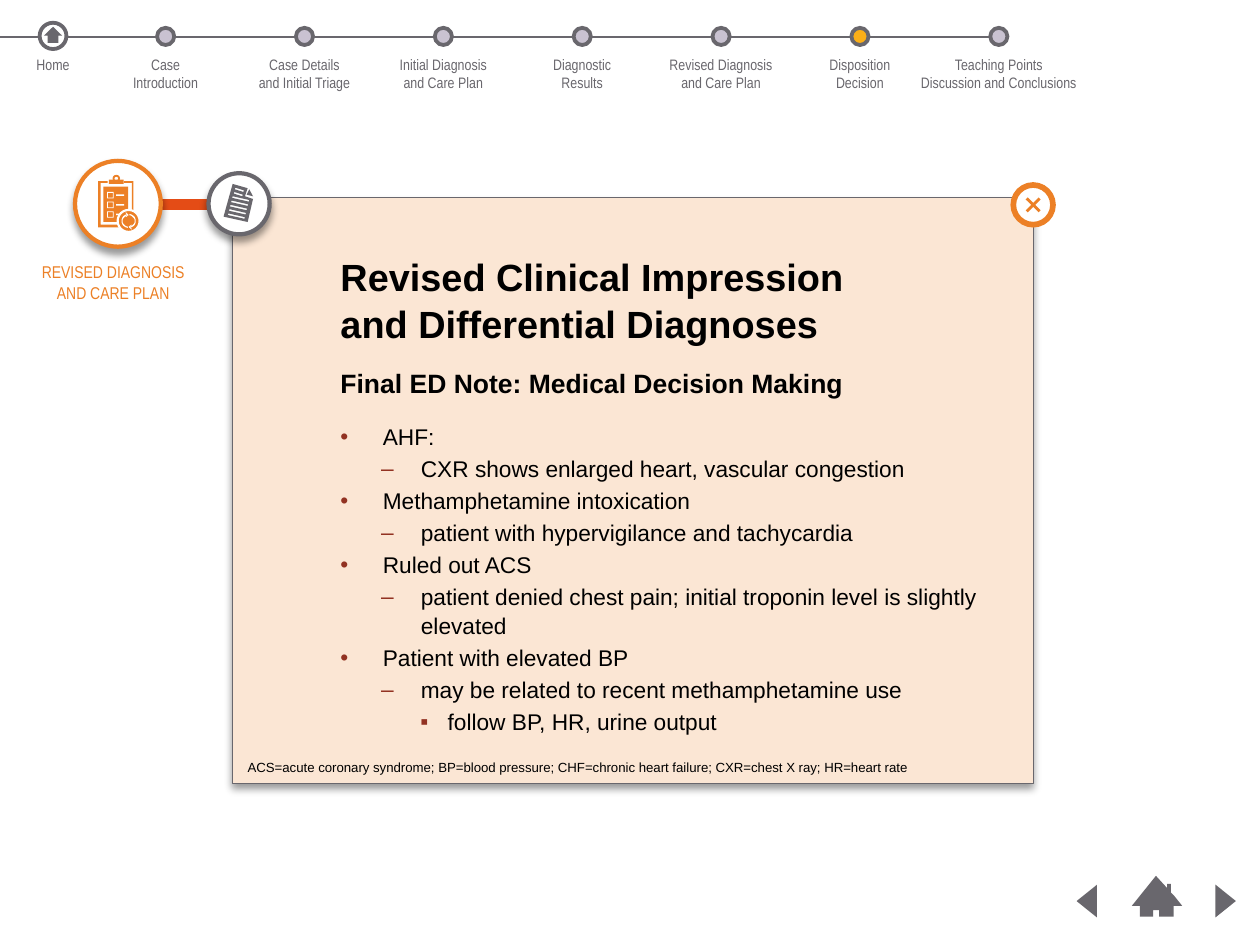
"""Build the revised clinical impression slide with its navigation bar."""
from math import cos, pi, sin

from lxml import etree
from pptx import Presentation
from pptx.dml.color import RGBColor
from pptx.enum import shapes, text
from pptx.oxml import ns
from pptx.util import Cm, Pt

GREY = RGBColor(0x69, 0x67, 0x6D)
ORANGE = RGBColor(0xEC, 0x80, 0x26)
BAR_RED = RGBColor(0xE4, 0x4C, 0x16)
CREAM = RGBColor(0xFB, 0xE6, 0xD4)
LILAC = RGBColor(0xC9, 0xC2, 0xD1)
AMBER = RGBColor(0xFC, 0xAF, 0x17)
BRICK = RGBColor(0x92, 0x32, 0x22)
BLACK = RGBColor(0, 0, 0)
WHITE = RGBColor(0xFF, 0xFF, 0xFF)
KIND = shapes.MSO_SHAPE

STOPS = [
    ["Case", "Introduction"],
    ["Case Details", "and Initial Triage"],
    ["Initial Diagnosis", "and Care Plan"],
    ["Diagnostic", "Results"],
    ["Revised Diagnosis", "and Care Plan"],
    ["Disposition", "Decision"],
    ["Teaching Points", "Discussion and Conclusions"],
]
CURRENT_STOP = 5
HEADING = ["Revised Clinical Impression", "and Differential Diagnoses"]
NOTE_HEADING = "Final ED Note: Medical Decision Making"
FINDINGS = [
    (0, "AHF:"),
    (1, "CXR shows enlarged heart, vascular congestion"),
    (0, "Methamphetamine intoxication"),
    (1, "patient with hypervigilance and tachycardia"),
    (0, "Ruled out ACS"),
    (1, "patient denied chest pain; initial troponin level is slightly elevated"),
    (0, "Patient with elevated BP"),
    (1, "may be related to recent methamphetamine use"),
    (2, "follow BP, HR, urine output"),
]
BULLETS = [("•", 0.79, 0.79), ("–", 1.5, 0.74), ("▪", 2.0, 0.51)]
SECTION = "REVISED DIAGNOSIS AND CARE PLAN"
ABBREVIATIONS = ("ACS=acute coronary syndrome; BP=blood pressure; CHF=chronic heart "
                 "failure; CXR=chest X ray; HR=heart rate")

# Outlines below are in hundredths of a centimetre.
BOARD_FRAME = [(231, 338), (231, 341), (246, 341), (246, 419), (188, 419), (188, 341),
               (201, 341), (201, 338), (183, 338), (183, 424), (249, 424), (249, 338)]
CHEVRON = [(234, 397), (235, 396), (240, 401), (235, 405), (234, 404), (238, 401)]
BADGE_CENTRE = (240, 412)
PAGE = [(457, 366), (462, 351), (434, 343), (417, 404), (462, 414), (472, 371)]
PAGE_FOLD = [(465, 353), (460, 363), (472, 366)]
SHORT_LINE = [(439, 350), (455, 355), (454, 358), (438, 353)]
LONG_LINE = [(434, 366), (465, 373), (464, 376), (433, 369)]
HOUSE = [(2189, 1669), (2184, 1664), (2184, 1648), (2177, 1648), (2177, 1656),
         (2156, 1633), (2111, 1689), (2126, 1689), (2126, 1709), (2151, 1709),
         (2151, 1697), (2162, 1697), (2162, 1709), (2189, 1709), (2189, 1689),
         (2205, 1689)]


def paint(part, fill, line=None, weight=0, shadow=False):
    part.shadow.inherit = False
    part.fill.solid()
    part.fill.fore_color.rgb = fill
    if line is None:
        part.line.fill.background()
    else:
        part.line.color.rgb = line
        part.line.width = Pt(weight)
    if shadow:
        effects = part._element.spPr.find(ns.qn("a:effectLst"))
        outer = etree.SubElement(effects, ns.qn("a:outerShdw"), blurRad=str(Pt(4)),
                                 dist=str(Pt(3)), dir="5400000", rotWithShape="0")
        shade = etree.SubElement(outer, ns.qn("a:srgbClr"), val="000000")
        etree.SubElement(shade, ns.qn("a:alpha"), val="40000")
    return part


def centred(slide, kind, x, y, width, height, *look):
    part = slide.shapes.add_shape(kind, Cm(x - width / 2), Cm(y - height / 2),
                                  Cm(width), Cm(height))
    return paint(part, *look)


def outline(slide, contours, fill):
    pen = slide.shapes.build_freeform(*contours[0][0], scale=Cm(0.01))
    pen.add_line_segments(contours[0][1:])
    for contour in contours[1:]:
        pen.move_to(*contour[0])
        pen.add_line_segments(contour[1:])
    return paint(pen.convert_to_shape(), fill)


def rule(slide, x1, y1, x2, y2, color, weight):
    line = slide.shapes.add_connector(shapes.MSO_CONNECTOR.STRAIGHT,
                                      Cm(x1), Cm(y1), Cm(x2), Cm(y2))
    line.line.color.rgb = color
    line.line.width = Pt(weight)
    etree.SubElement(line._element.spPr, ns.qn("a:effectLst"))


def write(paragraph, lines, size, color, font="Arial", bold=False):
    for i, words in enumerate(lines):
        if i:
            paragraph.add_line_break()
        run = paragraph.add_run()
        run.text = words
        run.font.name, run.font.size, run.font.bold = font, Pt(size), bold
        run.font.color.rgb = color


def frame(part, x, y, width, height, margin_x=0, margin_y=0):
    part.left, part.top, part.width, part.height = Cm(x), Cm(y), Cm(width), Cm(height)
    box = part.text_frame
    box.word_wrap = True
    box.auto_size = text.MSO_AUTO_SIZE.NONE
    box.vertical_anchor = text.MSO_ANCHOR.TOP
    box.margin_left = box.margin_right = Cm(margin_x)
    box.margin_top = box.margin_bottom = Cm(margin_y)
    return box


def label(slide, lines, x, y, width, height, margins, size, color, font, align):
    box = frame(slide.shapes.add_textbox(0, 0, 0, 0), x, y, width, height, *margins)
    box.paragraphs[0].alignment = align
    write(box.paragraphs[0], lines, size, color, font)


def space(paragraph, after):
    paragraph.alignment = text.PP_ALIGN.LEFT
    paragraph.line_spacing = 1.04
    paragraph.space_before, paragraph.space_after = Pt(0), Pt(after)


def indent(paragraph, mark=None, left=0, hang=0):
    props = paragraph._p.get_or_add_pPr()
    props.set("marL", str(Cm(left)))
    props.set("indent", str(-Cm(hang)))
    if mark is None:
        etree.SubElement(props, ns.qn("a:buNone"))
        return
    color = etree.SubElement(props, ns.qn("a:buClr"))
    etree.SubElement(color, ns.qn("a:srgbClr"), val=str(BRICK))
    etree.SubElement(props, ns.qn("a:buFont"), typeface="Arial")
    etree.SubElement(props, ns.qn("a:buChar"), char=mark)


def draw_card(slide):
    centred(slide, KIND.RECTANGLE, 11.81, 9.14, 14.94, 10.92, CREAM, GREY, 0.25, True)
    title, body = slide.shapes.title, slide.placeholders[1]
    for part in (title, body):
        slide.shapes._spTree.append(part._element)
    heading = frame(title, 6.35, 4.7, 12.52, 1.8).paragraphs[0]
    space(heading, 0)
    write(heading, HEADING, 20, BLACK, bold=True)
    notes = frame(body, 6.35, 6.82, 12.52, 6.8)
    subheading = notes.paragraphs[0]
    space(subheading, 12)
    indent(subheading)
    write(subheading, [NOTE_HEADING], 14, BLACK, bold=True)
    for level, finding in FINDINGS:
        item = notes.add_paragraph()
        item.level = level
        space(item, 2)
        indent(item, *BULLETS[level])
        write(item, [finding], 12, BLACK)
    label(slide, [ABBREVIATIONS], 4.37, 14.02, 14.48, 0.56, (0.25, 0.13), 7, BLACK,
          "Arial", text.PP_ALIGN.LEFT)
    centred(slide, KIND.OVAL, 19.27, 3.82, 0.74, 0.74, WHITE, ORANGE, 3)
    for rise in (0.12, -0.12):
        rule(slide, 19.15, 3.82 - rise, 19.39, 3.82 + rise, ORANGE, 1.5)


def draw_section(slide):
    rule(slide, 2.9, 3.81, 3.96, 3.81, BAR_RED, 6)
    centred(slide, KIND.OVAL, 4.46, 3.8, 1.14, 1.14, WHITE, GREY, 2.25, True)
    lines = [[(x - 2 * i, y + 8 * i) for x, y in line]
             for line, count in ((SHORT_LINE, 2), (LONG_LINE, 5)) for i in range(count)]
    outline(slide, [PAGE] + lines, GREY)
    outline(slide, [PAGE_FOLD], GREY)
    centred(slide, KIND.OVAL, 2.2, 3.8, 1.6, 1.6, WHITE, ORANGE, 2.25, True)
    centred(slide, KIND.RECTANGLE, 2.16, 3.81, 0.46, 0.66, ORANGE)
    outline(slide, [BOARD_FRAME], ORANGE)
    centred(slide, KIND.RECTANGLE, 2.17, 3.39, 0.28, 0.08, ORANGE)
    centred(slide, KIND.DONUT, 2.17, 3.33, 0.14, 0.14, ORANGE)
    for i in range(3):
        y = 3.64 + 0.18 * i
        centred(slide, KIND.FRAME, 2.06, y, 0.12, 0.12, WHITE)
        centred(slide, KIND.RECTANGLE, 2.24, y, 0.15, 0.03, WHITE)
    cx, cy = BADGE_CENTRE
    centred(slide, KIND.OVAL, cx / 100, cy / 100, 0.41, 0.41, ORANGE, WHITE, 1.13)
    angles = [pi * (i / 12 - 0.5) * 0.92 for i in range(13)]
    for side in (-1, 1):
        arc = [(cx + side * r * cos(a), cy + r * sin(a))
               for r, sweep in ((13, angles), (11, angles[::-1])) for a in sweep]
        outline(slide, [arc], WHITE)
        arrow = [(cx - side * (cx - x), cy - side * (cy - y)) for x, y in CHEVRON]
        outline(slide, [arrow], WHITE)
    label(slide, [SECTION], 0.33, 4.75, 3.56, 1.02, (0.25, 0.13), 9, ORANGE,
          "Arial Narrow", text.PP_ALIGN.CENTER)


def draw_navigation(slide):
    rule(slide, 0, 0.69, 18.44, 0.69, GREY, 0.75)
    centred(slide, KIND.OVAL, 0.99, 0.67, 0.5, 0.49, WHITE, GREY, 2)
    roof = centred(slide, KIND.UP_ARROW, 0.99, 0.65, 0.34, 0.3, GREY)
    roof.adjustments[0], roof.adjustments[1] = 0.6, 0.55
    stops = [(0.99, ["Home"])] + [(3.09 + 2.59 * i, s) for i, s in enumerate(STOPS)]
    for i, (x, lines) in enumerate(stops):
        if i:
            color = AMBER if i - 1 == CURRENT_STOP else LILAC
            centred(slide, KIND.OVAL, x, 0.68, 0.32, 0.32, color, GREY, 2)
        width = 3.2 if i else 1.2
        label(slide, lines, x - width / 2, 0.94, width, 0.89, (0.1, 0.1), 8, GREY,
              "Arial Narrow", text.PP_ALIGN.CENTER)
    for x, turn in ((20.27, 270), (22.86, 90)):
        pointer = centred(slide, KIND.ISOSCELES_TRIANGLE, x, 16.8, 0.61, 0.38, GREY)
        pointer.rotation = turn
    outline(slide, [HOUSE], GREY)


def main():
    deck = Presentation()
    deck.slide_width, deck.slide_height = Cm(23.5), Cm(17.6)
    slide = deck.slides.add_slide(deck.slide_layouts[1])
    draw_card(slide)
    draw_section(slide)
    draw_navigation(slide)
    deck.save("out.pptx")


if __name__ == "__main__":
    main()
